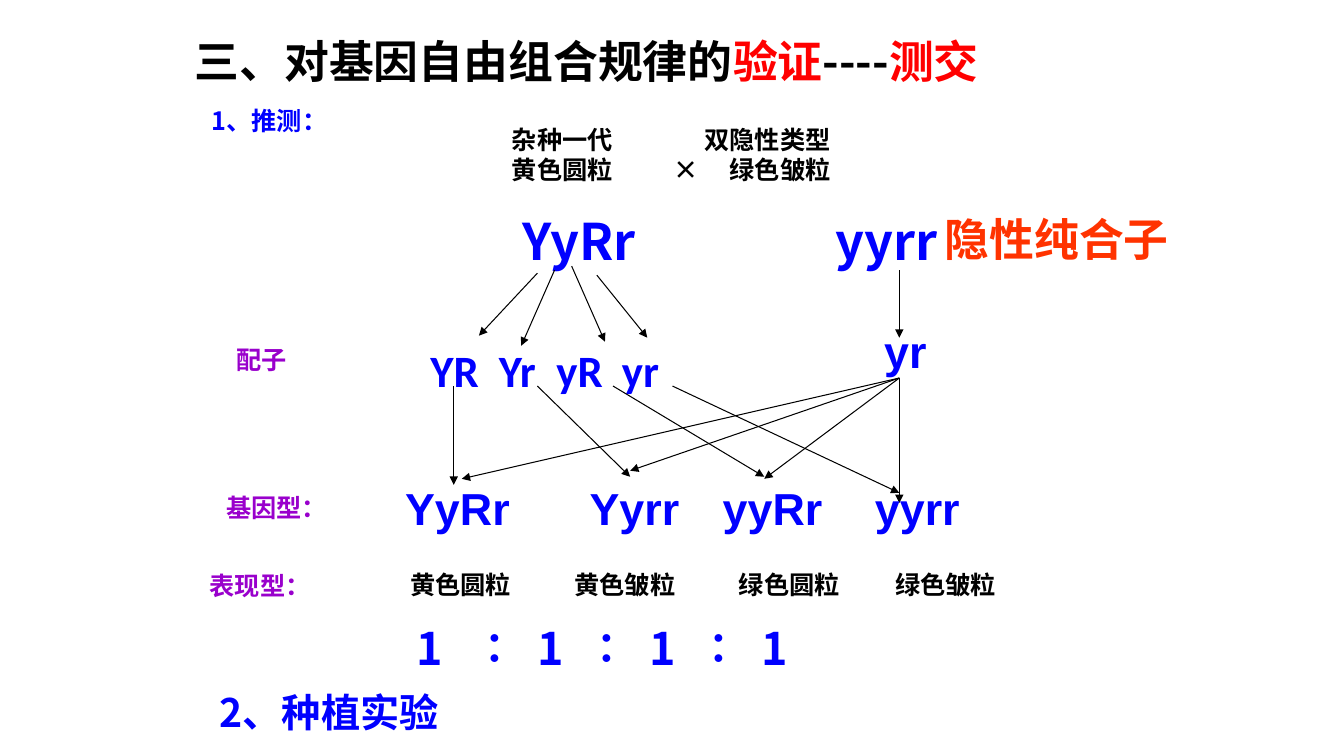
import pptx
import pptx.dml.color
import pptx.enum.shapes
import pptx.enum.text
import pptx.oxml.ns
import pptx.util
from lxml import etree

Inches = pptx.util.Inches
Pt = pptx.util.Pt
RGBColor = pptx.dml.color.RGBColor
ALIGN = pptx.enum.text.PP_ALIGN
qn = pptx.oxml.ns.qn

BLACK = RGBColor(0x00, 0x00, 0x00)
RED = RGBColor(0xFF, 0x00, 0x00)
BLUE = RGBColor(0x00, 0x00, 0xFF)
PURPLE = RGBColor(0x99, 0x00, 0xCC)
ORANGE = RGBColor(0xFF, 0x33, 0x00)
CJK = "Noto Sans CJK SC"


class CrossSlide:
    def __init__(self, presentation):
        self.slide = presentation.slides.add_slide(presentation.slide_layouts[5])

    def title(self, runs, box, size):
        self.fill_text(self.slide.shapes.title, [runs], box, size)

    def text(self, words, box, size=18, color=BLACK, **style):
        """Add a text box; each line of words becomes a paragraph."""
        shape = self.slide.shapes.add_textbox(0, 0, 0, 0)
        lines = [[(line, color)] for line in words.split("\n")]
        self.fill_text(shape, lines, box, size, **style)

    def fill_text(self, shape, lines, box, size, font=CJK, align=ALIGN.LEFT,
                  indent=0.1, tabs=(), wrap=True):
        """Place a shape and write lines of (words, color) runs, with tab stops per line."""
        for name, length in zip(("left", "top", "width", "height"), box):
            setattr(shape, name, Inches(length))
        # The CJK font has tall lines: tighten them and lower the first one.
        lowering = 0.1 * size / 72 if font == CJK else 0
        frame_format = {
            "word_wrap": wrap,
            "auto_size": pptx.enum.text.MSO_AUTO_SIZE.NONE,
            "vertical_anchor": pptx.enum.text.MSO_ANCHOR.TOP,
            "margin_left": Inches(indent),
            "margin_right": Inches(0.1),
            "margin_top": Inches(0.05 + lowering),
            "margin_bottom": Inches(0.05),
        }
        frame = shape.text_frame
        for name, value in frame_format.items():
            setattr(frame, name, value)
        for index, runs in enumerate(lines):
            paragraph = frame.paragraphs[0] if index == 0 else frame.add_paragraph()
            paragraph.alignment = align
            if font == CJK:
                paragraph.line_spacing = Pt(1.17 * size)
            if tabs:
                self.tab_stops(paragraph, tabs[index])
            for words, color in runs:
                run = paragraph.add_run()
                run.text = words
                for name, value in {"name": font, "size": Pt(size), "bold": True}.items():
                    setattr(run.font, name, value)
                run.font.color.rgb = color
                east_asian = etree.SubElement(run.font._element, qn("a:ea"))
                east_asian.set("typeface", font)

    def tab_stops(self, paragraph, positions):
        tab_list = etree.SubElement(paragraph._p.get_or_add_pPr(), qn("a:tabLst"))
        for position in positions:
            etree.SubElement(tab_list, qn("a:tab"), pos=str(Inches(position)), algn="l")

    def arrow(self, start, end):
        shape = self.slide.shapes.add_connector(
            pptx.enum.shapes.MSO_CONNECTOR.STRAIGHT, *map(Inches, start + end))
        shape.line.color.rgb = BLACK
        shape.line.width = Pt(0.75)
        etree.SubElement(shape.line._get_or_add_ln(), qn("a:tailEnd"), type="triangle")
        etree.SubElement(shape._element.spPr, qn("a:effectLst"))


def main():
    presentation = pptx.Presentation()
    presentation.slide_width = Inches(13.33)
    presentation.slide_height = Inches(7.5)
    cross = CrossSlide(presentation)

    cross.title([("三、对基因自由组合规律的", BLACK), ("验证", RED), ("----", BLACK), ("测交", RED)],
                (1.83, 0.25, 9.27, 0.63), 32)
    cross.text("1、推测：", (2, 0.98, 1.73, 0.4), color=BLUE, wrap=False)

    # Parents
    cross.text("杂种一代\t双隐性类型\n黄色圆粒\t×\t绿色皱粒", (4.98, 1.17, 6.5, 0.71),
               tabs=[(1.91,), (1.6, 2.16)])
    cross.text("YyRr", (5.08, 2, 1.42, 0.7), 36, BLUE)
    cross.text("yyrr", (8.19, 2, 1.55, 0.7), 36, BLUE)
    cross.text("隐性纯合子", (9.27, 2.02, 2.48, 0.63), 32, ORANGE)

    # Gametes
    cross.text("配子", (2.25, 3.35, 1.42, 0.4), color=PURPLE)
    cross.text("YR\tYr\tyR\tyr", (4.17, 3.35, 2.97, 0.64), 32, BLUE, font="Calibri",
               wrap=False, tabs=[(0.68, 1.25, 1.9)])
    cross.text("yr", (8.67, 3.16, 0.62, 0.63), 32, BLUE, font="Arial", wrap=False)
    for start, end in [((5.33, 2.71), (4.75, 3.33)), ((5.5, 2.68), (5.17, 3.43)),
                       ((5.67, 2.64), (6, 3.39)), ((5.92, 2.73), (6.42, 3.35)),
                       ((8.92, 2.68), (8.92, 3.35))]:
        cross.arrow(start, end)

    # Each offspring joins one gamete of the hybrid with the single recessive gamete
    recessive_gamete = (8.92, 3.75)
    for gamete_x, hybrid_end, recessive_end in [
            (4.5, (4.5, 4.81), (4.58, 4.75)), (5.33, (6.25, 4.73), (6.25, 4.67)),
            (6.08, (7.58, 4.73), (7.58, 4.75)), (6.67, (8.92, 4.89), (8.92, 4.99))]:
        cross.arrow((gamete_x, 3.83), hybrid_end)
        cross.arrow(recessive_gamete, recessive_end)

    # Offspring
    cross.text("基因型：", (1.83, 4.82, 1.83, 0.71), color=PURPLE, align=ALIGN.CENTER)
    cross.text("表现型：", (1.87, 5.59, 1.93, 0.4), color=PURPLE, indent=0.21)
    for genotype, genotype_left, phenotype, phenotype_left in [
            ("YyRr", 3.92, "黄色圆粒", 3.97), ("Yyrr", 5.75, "黄色皱粒", 5.6),
            ("yyRr", 7.07, "绿色圆粒", 7.23), ("yyrr", 8.58, "绿色皱粒", 8.78)]:
        cross.text(genotype, (genotype_left, 4.72, 1.3, 0.63), 32, BLUE,
                   font="Arial", wrap=False)
        cross.text(phenotype, (phenotype_left, 5.58, 2.06, 0.4))

    ratio_tabs = [first + 1.11 * step for step in range(3) for first in (0.56, 1.2)]
    cross.text("\t∶\t".join("1111"), (3.83, 6.08, 6.08, 0.63), 32, BLUE,
               indent=0.3, tabs=[ratio_tabs])
    cross.text("2、种植实验", (2.08, 6.75, 3.75, 0.57), 28, BLUE)

    presentation.save("out.pptx")


if __name__ == "__main__":
    main()
